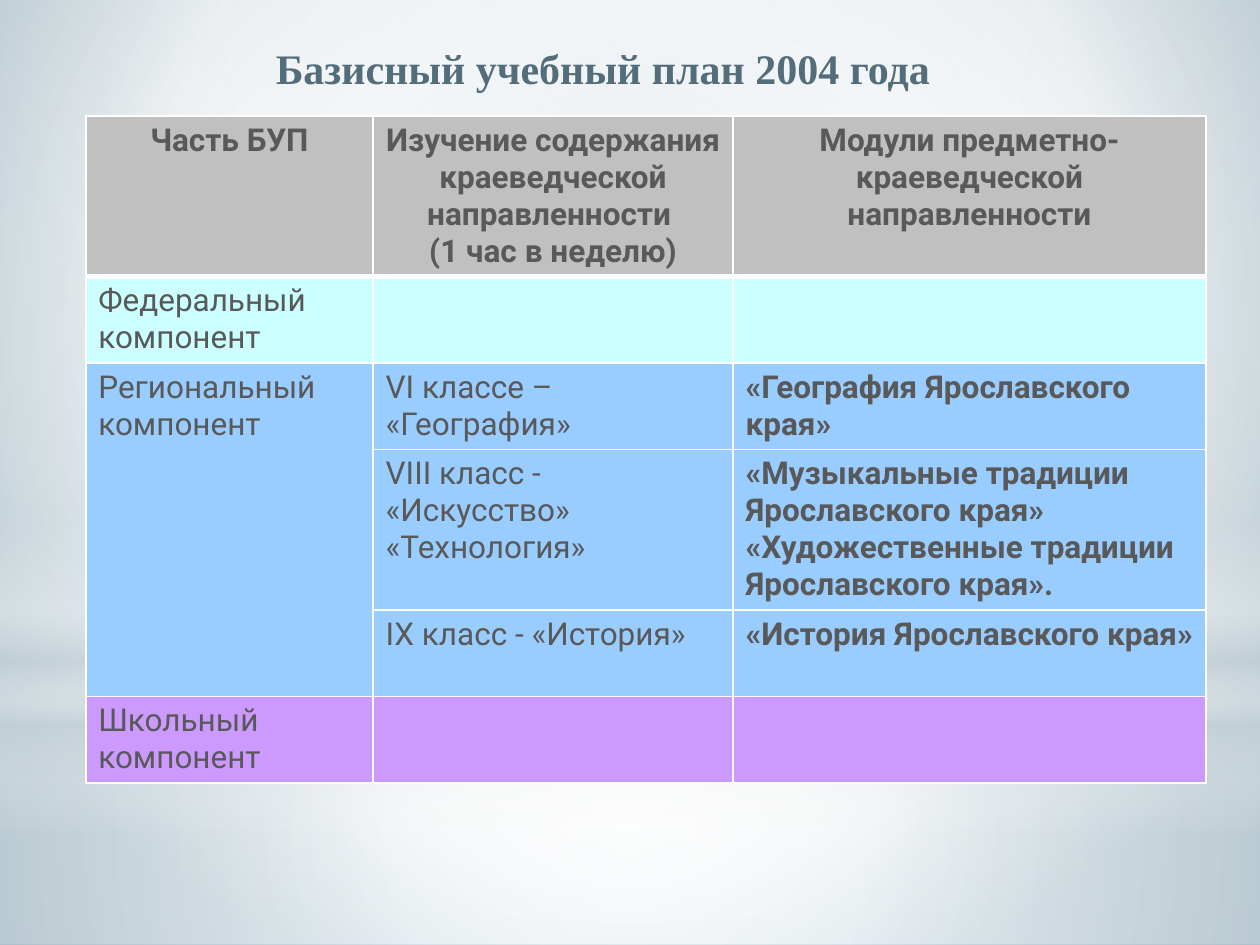
from lxml.etree import SubElement
from pptx import Presentation
from pptx.dml.color import RGBColor
from pptx.enum.shapes import MSO_SHAPE
from pptx.enum.text import MSO_AUTO_SIZE, PP_ALIGN
from pptx.oxml import parse_xml
from pptx.oxml.ns import nsdecls, qn
from pptx.util import Pt

COLORS = {"white": "FFFFFF", "mist": "C5D1D7", "sky": "B8CAD3", "steel": "8FAEBD",
          "title": "546D7A", "text": "595959", "header": "C0C0C0",
          "federal": "CCFFFF", "regional": "99CCFF", "school": "CC99FF"}
W, H = 720, 540
TITLE = "Базисный учебный план 2004 года"

# Gradient stops: position %, colour, opacity %
CENTER = (50, 50, 50, 50)
BACKGROUND = [(0, "sky", 100), (60, "white", 100), (100, "steel", 100)]
LAYERS = [  # shape, top, height, stops, focus (None: vertical linear)
    (MSO_SHAPE.RECTANGLE, 402, 138,
     [(0, "white", 91), (37, "white", 76), (100, "mist", 79)], CENTER),
    (MSO_SHAPE.RECTANGLE, 0, 402,
     [(0, "white", 89), (48, "white", 62), (100, "mist", 79)], CENTER),
    (MSO_SHAPE.RECTANGLE, 297, 180,
     [(0, "white", 0), (29, "white", 30), (45, "mist", 40), (55, "white", 26),
      (65, "mist", 60), (100, "white", 0)], None),
    (MSO_SHAPE.OVAL, 126, 402, [(0, "white", 100), (56, "white", 0)], CENTER),
]

COLS = [164.2, 205.7, 270.2]
ROWS = [  # fill, height, cell texts
    ("header", 91.6, ["Часть БУП",
                      "Изучение содержания краеведческой направленности \n(1 час в неделю)",
                      "Модули предметно-краеведческой направленности"]),
    ("federal", 49.4, ["Федеральный компонент", "", ""]),
    ("regional", 49.4, ["Региональный компонент", "VI классе – «География»",
                        "«География Ярославского края»"]),
    ("regional", 91.6, ["", "VIII класс - «Искусство» «Технология»",
                        "«Музыкальные традиции Ярославского края» "
                        "«Художественные традиции Ярославского края»."]),
    ("regional", 49.4, ["", "IX класс - «История»", "«История Ярославского края»"]),
    ("school", 49.4, ["Школьный компонент", "", ""]),
]
REGIONAL_ROWS = (2, 4)


def rgb(name):
    return RGBColor.from_string(COLORS[name])


def set_gradient(fill, owner, stops, focus):
    """Fill with stops, circular around the focus insets or linear top to bottom."""
    fill.gradient()
    grad = next(owner.iter(qn("a:gradFill")))
    for child in list(grad):
        grad.remove(child)
    gs_list = SubElement(grad, qn("a:gsLst"))
    for pos, color, opacity in stops:
        gs = SubElement(gs_list, qn("a:gs"), pos=str(pos * 1000))
        clr = SubElement(gs, qn("a:srgbClr"), val=COLORS[color])
        if opacity < 100:
            SubElement(clr, qn("a:alpha"), val=str(opacity * 1000))
    if focus:
        path = SubElement(grad, qn("a:path"), {"path": "circle"})
        SubElement(path, qn("a:fillToRect"),
                   {side: str(v * 1000) for side, v in zip("ltrb", focus)})
    else:
        SubElement(grad, qn("a:lin"), ang="5400000", scaled="0")


def write(tf, text, size=18, font="Roboto", color="text", bold=False, align=PP_ALIGN.LEFT):
    for i, line in enumerate(text.split("\n")):
        p = tf.add_paragraph() if i else tf.paragraphs[0]
        p.alignment = align
        r = p.add_run()
        r.text = line
        r.font.size, r.font.name, r.font.bold = Pt(size), font, bold
        r.font.color.rgb = rgb(color)


def set_borders(cell, top, bottom):
    tc_pr = cell._tc.get_or_add_tcPr()
    for i, (side, width) in enumerate(zip("LRTB", (1, 1, top, bottom))):
        tc_pr.insert(i, parse_xml(
            f'<a:ln{side} {nsdecls("a")} w="{Pt(width)}"><a:solidFill>'
            f'<a:srgbClr val="{COLORS["white"]}"/></a:solidFill></a:ln{side}>'))


def add_plan_table(s):
    heights = [height for _, height, _ in ROWS]
    table = s.shapes.add_table(len(ROWS), len(COLS), Pt(49), Pt(66.2),
                               Pt(sum(COLS)), Pt(sum(heights))).table
    for col, width in zip(table.columns, COLS):
        col.width = Pt(width)
    for i, (color, height, texts) in enumerate(ROWS):
        table.rows[i].height = Pt(height)
        for j, text in enumerate(texts):
            cell = table.cell(i, j)
            cell.fill.solid()
            cell.fill.fore_color.rgb = rgb(color)
            set_borders(cell, top=3 if i == 1 else 1, bottom=3 if i == 0 else 1)
            if text:
                write(cell.text_frame, text, bold=i == 0 or j == 2,
                      align=PP_ALIGN.LEFT if i else PP_ALIGN.CENTER)
    first, last = REGIONAL_ROWS
    table.cell(first, 0).merge(table.cell(last, 0))


def main():
    prs = Presentation()
    prs.slide_width, prs.slide_height = Pt(W), Pt(H)
    s = prs.slides.add_slide(prs.slide_layouts[6])
    set_gradient(s.background.fill, s._element, BACKGROUND, (20, 10, 20, 60))
    for kind, top, height, stops, focus in LAYERS:
        sp = s.shapes.add_shape(kind, 0, Pt(top), Pt(W), Pt(height))
        sp.shadow.inherit = False
        sp.line.fill.background()
        set_gradient(sp.fill, sp._element, stops, focus)

    add_plan_table(s)

    tf = s.shapes.add_textbox(Pt(150.5), Pt(20.9), Pt(392.4), Pt(36)).text_frame
    tf.word_wrap = False
    tf.auto_size = MSO_AUTO_SIZE.SHAPE_TO_FIT_TEXT
    write(tf, TITLE, size=24, font="Times New Roman", color="title", bold=True)
    prs.save("out.pptx")


if __name__ == "__main__":
    main()
